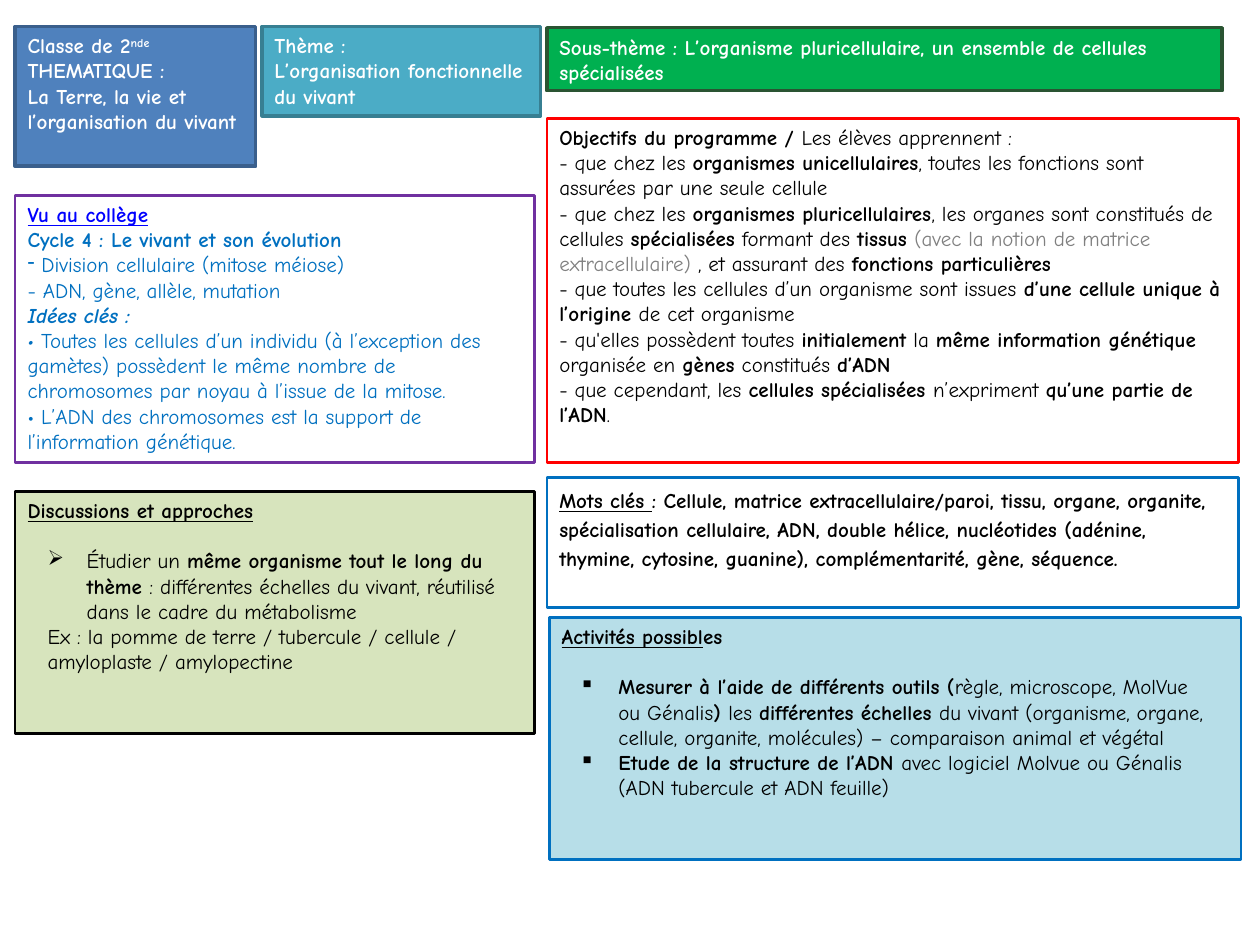
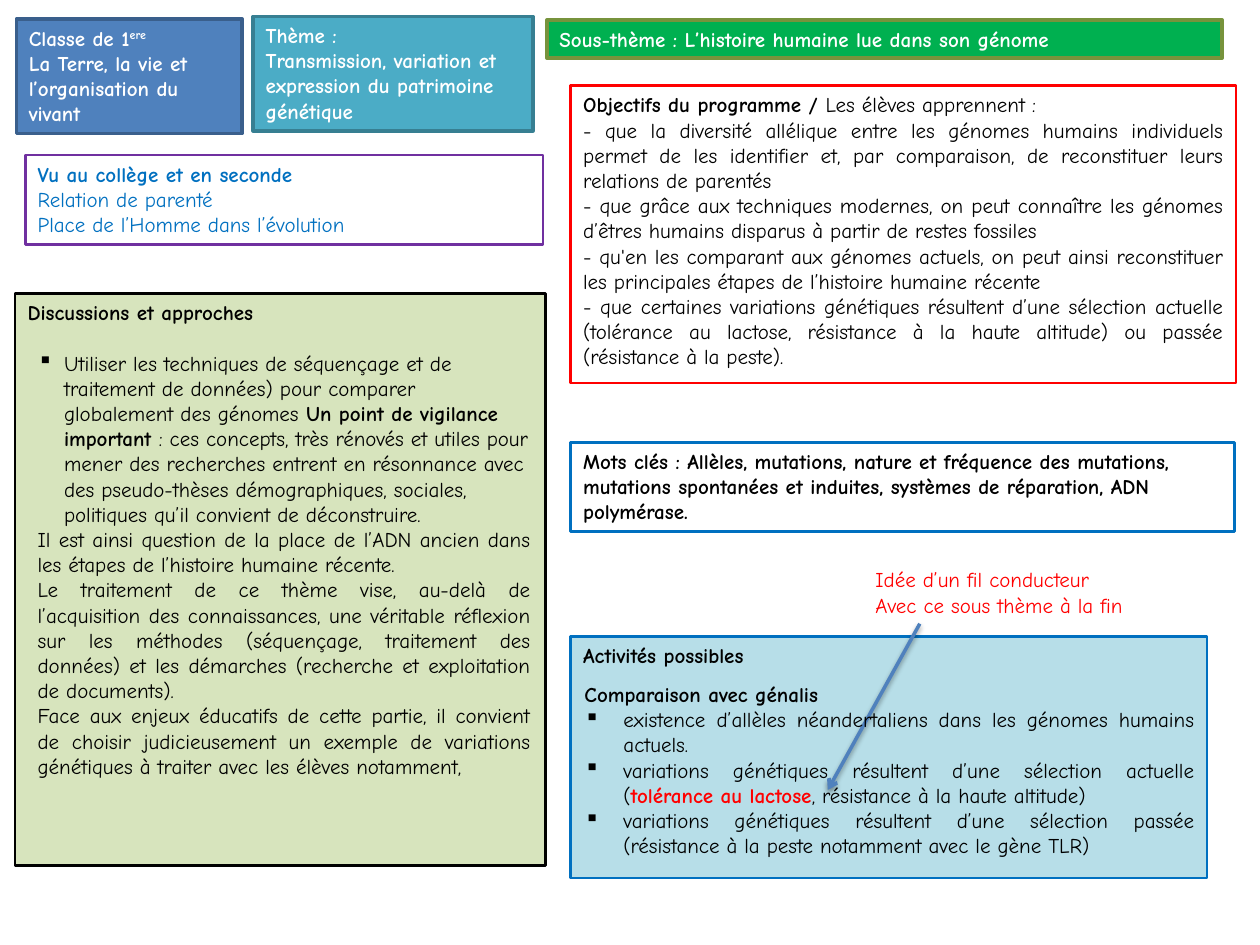
from collections import namedtuple
from dataclasses import dataclass

from lxml import etree
from pptx import Presentation
from pptx import util as u
from pptx.dml.color import RGBColor
from pptx.enum import shapes, text
from pptx.oxml.ns import qn

PX = 9144  # 100 px to the inch
Look = namedtuple("Look", "fill line width ink")


@dataclass(frozen=True)
class Theme:
    font: str = "Comic Neue"
    size: int = 12
    black: str = "000000"
    white: str = "FFFFFF"
    grey: str = "808080"
    red: str = "FF0000"
    blue: str = "0070C0"
    link: str = "0000FF"
    arrow: str = "4F81BD"
    olive: str = "77933C"

    @property
    def looks(self):
        return {
            "classe": Look("4F81BD", "3A5F8C", 2, self.white),
            "theme": Look("4BACC6", "377F92", 2, self.white),
            "sous_theme": Look("00B050", "2A5432", 2, self.white),
            "objectifs": Look(None, self.red, 1.5, self.black),
            "acquis": Look(None, "7030A0", 1.5, self.blue),
            "discussions": Look("D7E4BD", self.black, 1.5, self.black),
            "mots_cles": Look(None, self.blue, 1.5, self.black),
            "activites": Look("B7DEE8", self.blue, 1.5, self.black),
        }


T = Theme()


@dataclass
class Run:
    text: str
    bold: bool = False
    italic: bool = False
    underline: bool = False
    raised: bool = False
    color: str = None


def b(content, **style):
    return Run(content, bold=True, **style)


class Para:
    def __init__(self, *runs, justify=False, bullet=None, hang=0, spacing=None, after=0):
        self.runs = [Run(r) if isinstance(r, str) else r for r in runs]
        self.justify, self.bullet, self.hang = justify, bullet, hang
        self.spacing, self.after = spacing, after


def rgb(value):
    return RGBColor.from_string(value)


class Deck:
    def __init__(self, theme):
        self.theme = theme
        self.prs = Presentation()
        self.prs.slide_width, self.prs.slide_height = 1000 * PX, 750 * PX
        self.s = None

    def slide(self):
        self.s = self.prs.slides.add_slide(self.prs.slide_layouts[5])

    def title(self, at, content, line=None):
        sp = self.s.shapes.title
        sp.left, sp.top, sp.width, sp.height = (v * PX for v in at)
        self.paint(sp, self.theme.looks["sous_theme"], line)
        self.set_paras(sp, [Para(b(content))], self.theme.white)

    def box(self, look, at, *paras):
        sp = self.s.shapes.add_shape(shapes.MSO_SHAPE.RECTANGLE, *(v * PX for v in at))
        sp.shadow.inherit = False
        style = self.theme.looks[look]
        self.paint(sp, style)
        self.set_paras(sp, paras, style.ink)

    def label(self, at, *paras, color=None, wrap=True):
        sp = self.s.shapes.add_textbox(*(v * PX for v in at))
        self.set_paras(sp, paras, color or self.theme.black, wrap)

    def arrow(self, start, end):
        cx = self.s.shapes.add_connector(
            shapes.MSO_CONNECTOR.STRAIGHT, *(v * PX for v in start + end))
        cx.line.color.rgb = rgb(self.theme.arrow)
        cx.line.width = u.Pt(2)
        spPr = cx._element.spPr
        etree.SubElement(spPr.get_or_add_ln(), qn("a:tailEnd"), type="arrow")
        effects = etree.SubElement(spPr, qn("a:effectLst"))
        shadow = etree.SubElement(effects, qn("a:outerShdw"), blurRad=str(u.Pt(3.1)),
                                  dist=str(u.Pt(1.6)), dir="5400000", rotWithShape="0")
        color = etree.SubElement(shadow, qn("a:srgbClr"), val=self.theme.black)
        etree.SubElement(color, qn("a:alpha"), val="38000")

    def paint(self, sp, look, line=None):
        if look.fill:
            sp.fill.solid()
            sp.fill.fore_color.rgb = rgb(look.fill)
        else:
            sp.fill.background()
        sp.line.color.rgb = rgb(line or look.line)
        sp.line.width = u.Pt(look.width)

    def set_paras(self, sp, paras, color, wrap=True):
        tf = sp.text_frame
        tf.word_wrap = wrap
        tf.auto_size = text.MSO_AUTO_SIZE.NONE
        tf.vertical_anchor = text.MSO_ANCHOR.TOP
        for i, para in enumerate(paras):
            p = tf.paragraphs[0] if i == 0 else tf.add_paragraph()
            p.alignment = text.PP_ALIGN.JUSTIFY if para.justify else text.PP_ALIGN.LEFT
            if para.spacing:
                p.line_spacing = para.spacing
            if para.after:
                p.space_after = u.Pt(para.after)
            if para.bullet:
                pPr = p._p.get_or_add_pPr()
                pPr.set("marL", str(para.hang * PX))
                pPr.set("indent", str(-para.hang * PX))
                etree.SubElement(pPr, qn("a:buChar"), char=para.bullet)
            for run in para.runs:
                self.add_text(p, run, color)

    def add_text(self, p, run, color):
        r = p.add_run()
        r.text = run.text
        f = r.font
        f.name, f.size = self.theme.font, u.Pt(self.theme.size)
        f.bold, f.italic, f.underline = run.bold, run.italic, run.underline
        f.color.rgb = rgb(run.color or color)
        if run.raised:
            r._r.get_or_add_rPr().set("baseline", "30000")


def seconde(d):
    d.slide()

    # Header bands
    d.title((434, 22, 536, 50),
            "Sous-thème : L’organisme pluricellulaire, un ensemble de cellules spécialisées")
    d.box("classe", (12, 21, 191, 111),
          Para(b("Classe de 2"), b("nde", raised=True)),
          Para(b("THEMATIQUE :")),
          Para(b("La Terre, la vie et l’organisation du vivant")))
    d.box("theme", (208, 21, 221, 71),
          Para(b("Thème :")),
          Para(b("L’organisation fonctionnelle du vivant")))

    # Programme goals
    d.box("objectifs", (434, 94, 549, 273),
          Para(b("Objectifs du programme / "), "Les élèves apprennent :"),
          Para("- que chez les ", b("organismes unicellulaires"),
               ", toutes les fonctions sont assurées par une seule cellule"),
          Para("- que chez les ", b("organismes pluricellulaires"),
               ", les organes sont constitués de cellules ", b("spécialisées"),
               " formant des ", b("tissus "),
               Run("(avec la notion de matrice extracellulaire) ", color=T.grey),
               ", et assurant des ", b("fonctions particulières")),
          Para("- que toutes les cellules d’un organisme sont issues ",
               b("d’une cellule unique à l’origine "), "de cet organisme"),
          Para("- qu'elles possèdent toutes ", b("initialement"), " la ",
               b("même information génétique "), "organisée en ", b("gènes"),
               " constitués ", b("d’ADN")),
          Para("- que cependant, les ", b("cellules spécialisées "), "n’expriment ",
               b("qu’une partie de l’ADN"), "."))

    # Earlier learning
    d.box("acquis", (12, 155, 412, 212),
          Para(b("Vu au collège", underline=True, color=T.link)),
          Para(b("Cycle 4 : Le vivant et son évolution")),
          Para("Division cellulaire (mitose méiose)", bullet="-", hang=11),
          Para("- ADN, gène, allèle, mutation"),
          Para(b("Idées clés :", italic=True)),
          Para(Run("• ", italic=True),
               "Toutes les cellules d’un individu (à l’exception des gamètes) possèdent "
               "le même nombre de chromosomes par noyau à l’issue de la mitose."),
          Para("• L’ADN des chromosomes est la support de l’information génétique."))

    # Discussions
    d.box("discussions", (12, 390, 412, 192),
          Para(b("Discussions et approches", underline=True)))
    d.label((28, 430, 386, 151),
            Para("Étudier un ", b("même organisme tout le long du thème "),
                 ": différentes échelles du vivant, réutilisé dans le cadre du métabolisme",
                 bullet="➢", hang=31),
            Para("Ex : la pomme de terre / tubercule / cellule / amyloplaste / amylopectine"))

    # Key words and activities
    d.box("activites", (436, 490, 549, 192),
          Para(b("Activités possibl", underline=True), b("es"), justify=True))
    d.box("mots_cles", (434, 379, 549, 103),
          Para(b("Mots clés ", underline=True),
               b(": Cellule, matrice extracellulaire/paroi, tissu, organe, organite, "
                 "spécialisation cellulaire, ADN, double hélice, nucléotides (adénine, "
                 "thymine, cytosine, guanine), complémentarité, gène, séquence."),
               spacing=1.15, after=10))
    d.label((450, 530, 520, 151),
            Para(b("Mesurer à l’aide de différents outils ("),
                 "règle, microscope, MolVue ou Génalis", b(") "), "les ",
                 b("différentes échelles "),
                 "du vivant (organisme, organe, cellule, organite, molécules) – "
                 "comparaison animal et végétal", bullet="▪", hang=31),
            Para(b("Etude de la structure de l’ADN "),
                 "avec logiciel Molvue ou Génalis (ADN tubercule et ADN feuille)",
                 bullet="▪", hang=31))


def premiere(d):
    d.slide()

    # Header bands
    d.title((434, 16, 536, 30), "Sous-thème : L’histoire humaine lue dans son génome",
            line=T.olive)
    d.box("classe", (13, 15, 179, 91),
          Para(b("Classe de 1"), b("ere", raised=True)),
          Para(b("La Terre, la vie et l’organisation du vivant")))
    d.box("theme", (201, 13, 222, 91),
          Para(b("Thème :")),
          Para(b("Transmission, variation et expression du patrimoine génétique")))

    # Programme goals
    goals = (
        "- que la diversité allélique entre les génomes humains individuels permet de les "
        "identifier et, par comparaison, de reconstituer leurs relations de parentés",
        "- que grâce aux techniques modernes, on peut connaître les génomes d’êtres humains "
        "disparus à partir de restes fossiles",
        "- qu'en les comparant aux génomes actuels, on peut ainsi reconstituer les "
        "principales étapes de l’histoire humaine récente",
        "- que certaines variations génétiques résultent d’une sélection actuelle (tolérance "
        "au lactose, résistance à la haute altitude) ou passée (résistance à la peste).",
    )
    d.box("objectifs", (453, 68, 528, 236),
          Para(b("Objectifs du programme / "), "Les élèves apprennent :"),
          *(Para(goal, justify=True) for goal in goals))

    # Earlier learning
    d.box("acquis", (20, 123, 411, 71),
          Para(b("Vu au collège et en seconde")),
          Para("Relation de parenté"),
          Para("Place de l’Homme dans l’évolution"))

    # Discussions
    remarks = (
        "Il est ainsi question de la place de l’ADN ancien dans les étapes de l’histoire "
        "humaine récente.",
        "Le traitement de ce thème vise, au-delà de l’acquisition des connaissances, une "
        "véritable réflexion sur les méthodes (séquençage, traitement des données) et les "
        "démarches (recherche et exploitation de documents).",
        "Face aux enjeux éducatifs de cette partie, il convient de choisir judicieusement "
        "un exemple de variations génétiques à traiter avec les élèves notamment,",
    )
    d.box("discussions", (12, 233, 421, 454), Para(b("Discussions et approches")))
    d.label((20, 273, 411, 454),
            Para("Utiliser les techniques de séquençage et de traitement de données) pour "
                 "comparer globalement des génomes ", b("Un point de vigilance important "),
                 ": ces concepts, très rénovés et utiles pour mener des recherches entrent "
                 "en résonnance avec des pseudo-thèses démographiques, sociales, politiques "
                 "qu’il convient de déconstruire.", bullet="▪", hang=21),
            *(Para(remark, justify=True) for remark in remarks))

    # Key words and activities
    d.box("activites", (453, 505, 505, 192), Para(b("Activités possibles"), justify=True))
    d.box("mots_cles", (453, 351, 527, 71),
          Para(b("Mots clés : Allèles, mutations, nature et fréquence des mutations, "
                 "mutations spontanées et induites, systèmes de réparation, ADN polymérase.")))
    examples = (
        ["existence d’allèles néandertaliens dans les génomes humains actuels."],
        ["variations génétiques résultent d’une sélection actuelle (",
         b("tolérance au lactose", color=T.red), ", résistance à la haute altitude)"],
        ["variations génétiques résultent d’une sélection passée (résistance à la peste "
         "notamment avec le gène TLR)"],
    )

    # Guiding thread
    d.arrow((730, 495), (657, 627))
    d.label((685, 445, 234, 50),
            Para("Idée d’un fil conducteur"),
            Para("Avec ce sous thème à la fin"), color=T.red, wrap=False)
    d.label((454, 536, 504, 182),
            Para(b("Comparaison avec génalis"), justify=True),
            *(Para(*runs, justify=True, bullet="▪", hang=31) for runs in examples))


def main():
    deck = Deck(T)
    seconde(deck)
    premiere(deck)
    deck.prs.save("out.pptx")


if __name__ == "__main__":
    main()
